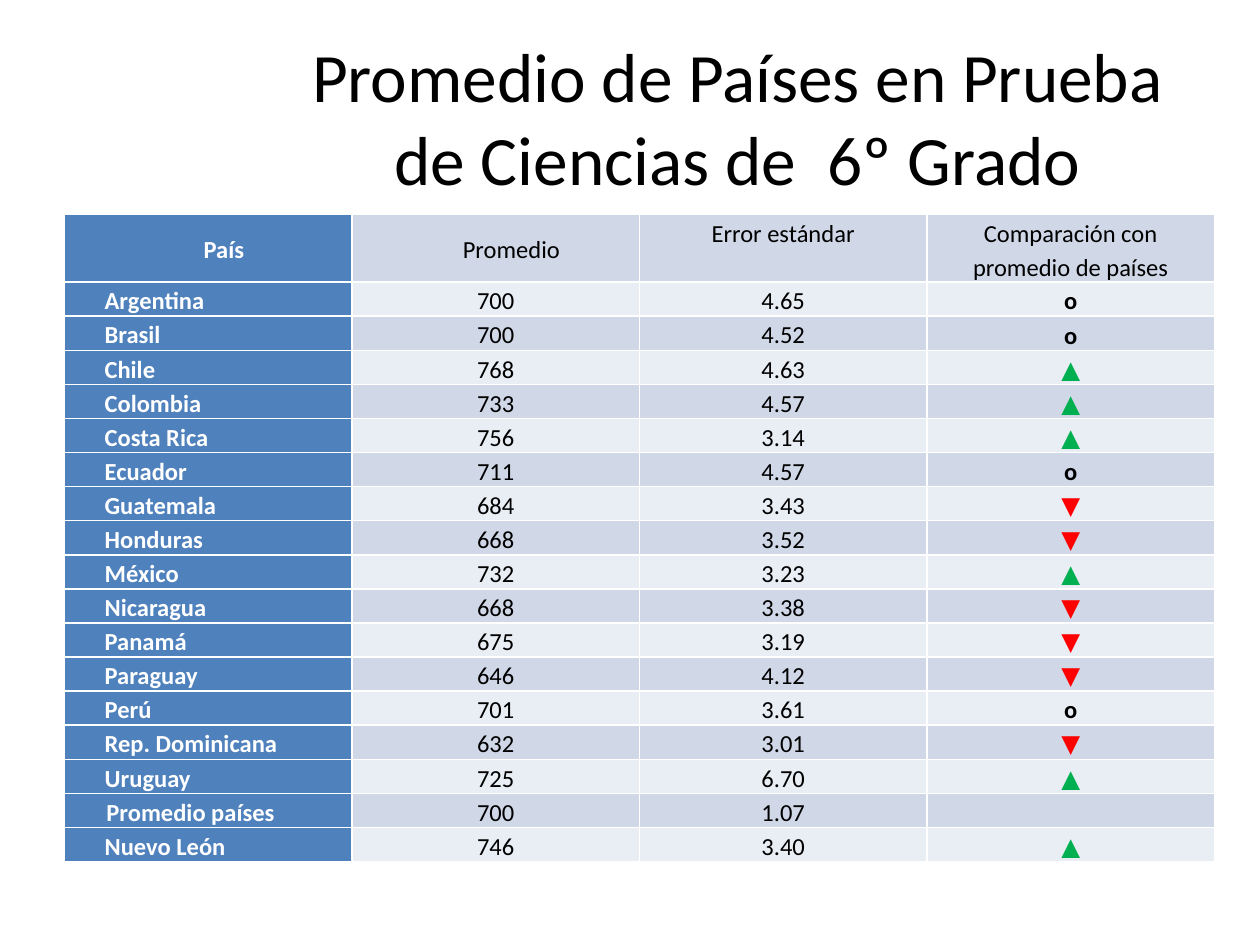
"""Build a slide with a table of sixth-grade science results by country."""
import pptx
import pptx.util
import pptx.dml.color
import pptx.enum.text
import pptx.oxml.ns
from lxml import etree

Pt = pptx.util.Pt
RGBColor = pptx.dml.color.RGBColor
ALIGN = pptx.enum.text.PP_ALIGN
ANCHOR = pptx.enum.text.MSO_ANCHOR
qn = pptx.oxml.ns.qn

BLACK = RGBColor(0x00, 0x00, 0x00)
WHITE = RGBColor(0xFF, 0xFF, 0xFF)
BLUE = RGBColor(0x4F, 0x81, 0xBD)
DARK_BAND = RGBColor(0xD0, 0xD8, 0xE8)
LIGHT_BAND = RGBColor(0xE9, 0xED, 0xF4)
GREEN = RGBColor(0x00, 0xB0, 0x50)
RED = RGBColor(0xFF, 0x00, 0x00)
MARK_COLORS = {"▲": GREEN, "▼": RED}

ROWS = [
    ("País", "Promedio", "Error estándar", "Comparación con promedio de países"),
    ("Argentina", "700", "4.65", "o"),
    ("Brasil", "700", "4.52", "o"),
    ("Chile", "768", "4.63", "▲"),
    ("Colombia", "733", "4.57", "▲"),
    ("Costa Rica", "756", "3.14", "▲"),
    ("Ecuador", "711", "4.57", "o"),
    ("Guatemala", "684", "3.43", "▼"),
    ("Honduras", "668", "3.52", "▼"),
    ("México", "732", "3.23", "▲"),
    ("Nicaragua", "668", "3.38", "▼"),
    ("Panamá", "675", "3.19", "▼"),
    ("Paraguay", "646", "4.12", "▼"),
    ("Perú", "701", "3.61", "o"),
    ("Rep. Dominicana", "632", "3.01", "▼"),
    ("Uruguay", "725", "6.70", "▲"),
    ("Promedio países", "700", "1.07", ""),
    ("Nuevo León", "746", "3.40", "▲"),
]
HEADER_HEIGHT, ROW_HEIGHT, COLUMN_WIDTH = 36.7, 19.5, 164.3


def add_span(para, text, size, color, bold=False):
    span = para.add_run()
    span.text = text
    span.font.name = "Calibri"
    span.font.size = Pt(size)
    span.font.bold = bold
    span.font.color.rgb = color


def add_borders(cell):
    properties = cell._tc.get_or_add_tcPr()
    for side in ("a:lnL", "a:lnR", "a:lnT", "a:lnB"):
        line = etree.SubElement(properties, qn(side), w=str(Pt(1)))
        fill = etree.SubElement(line, qn("a:solidFill"))
        etree.SubElement(fill, qn("a:srgbClr"), val=str(WHITE))


deck = pptx.Presentation()
deck.slide_width, deck.slide_height = Pt(720), Pt(540)
page = deck.slides.add_slide(deck.slide_layouts[6])

title_box = page.shapes.add_textbox(Pt(159), Pt(21.6), Pt(525), Pt(90))
title_box.text_frame.word_wrap = True
title_box.text_frame.vertical_anchor = ANCHOR.MIDDLE
title = title_box.text_frame.paragraphs[0]
title.alignment = ALIGN.CENTER
add_span(title, "Promedio de Países en Prueba de Ciencias de  6º Grado", 39.6, BLACK)

table_height = HEADER_HEIGHT + ROW_HEIGHT * (len(ROWS) - 1)
table = page.shapes.add_table(
    len(ROWS), 4, Pt(36.8), Pt(122.6), Pt(4 * COLUMN_WIDTH), Pt(table_height)
).table
for column in table.columns:
    column.width = Pt(COLUMN_WIDTH)

for row_index, values in enumerate(ROWS):
    is_header = row_index == 0
    table.rows[row_index].height = Pt(HEADER_HEIGHT if is_header else ROW_HEIGHT)
    for column_index, value in enumerate(values):
        is_country = column_index == 0
        cell = table.cell(row_index, column_index)
        add_borders(cell)
        cell.fill.solid()
        band = LIGHT_BAND if row_index % 2 else DARK_BAND
        cell.fill.fore_color.rgb = BLUE if is_country else band
        cell.margin_left = cell.margin_right = Pt(5)
        cell.margin_top = cell.margin_bottom = Pt(0)

        if is_header:
            cell.vertical_anchor = ANCHOR.TOP if column_index == 2 else ANCHOR.MIDDLE
        elif column_index == 3 or (is_country and row_index >= len(ROWS) - 2):
            cell.vertical_anchor = ANCHOR.MIDDLE
        else:
            cell.vertical_anchor = ANCHOR.BOTTOM

        para = cell.text_frame.paragraphs[0]
        para.line_spacing = 1.15
        para.alignment = ALIGN.LEFT if is_country and not is_header else ALIGN.CENTER
        if is_country or (is_header and column_index == 1):
            indent = 19 if value == "Promedio países" else 18
            para._p.get_or_add_pPr().set("marL", str(Pt(indent)))
        if value:
            color = WHITE if is_country else MARK_COLORS.get(value, BLACK)
            is_mark = column_index == 3 and not is_header
            add_span(para, value, 14, color, is_country or is_mark)
        else:
            etree.SubElement(para._p, qn("a:endParaRPr"), sz="1400")

deck.save("out.pptx")
